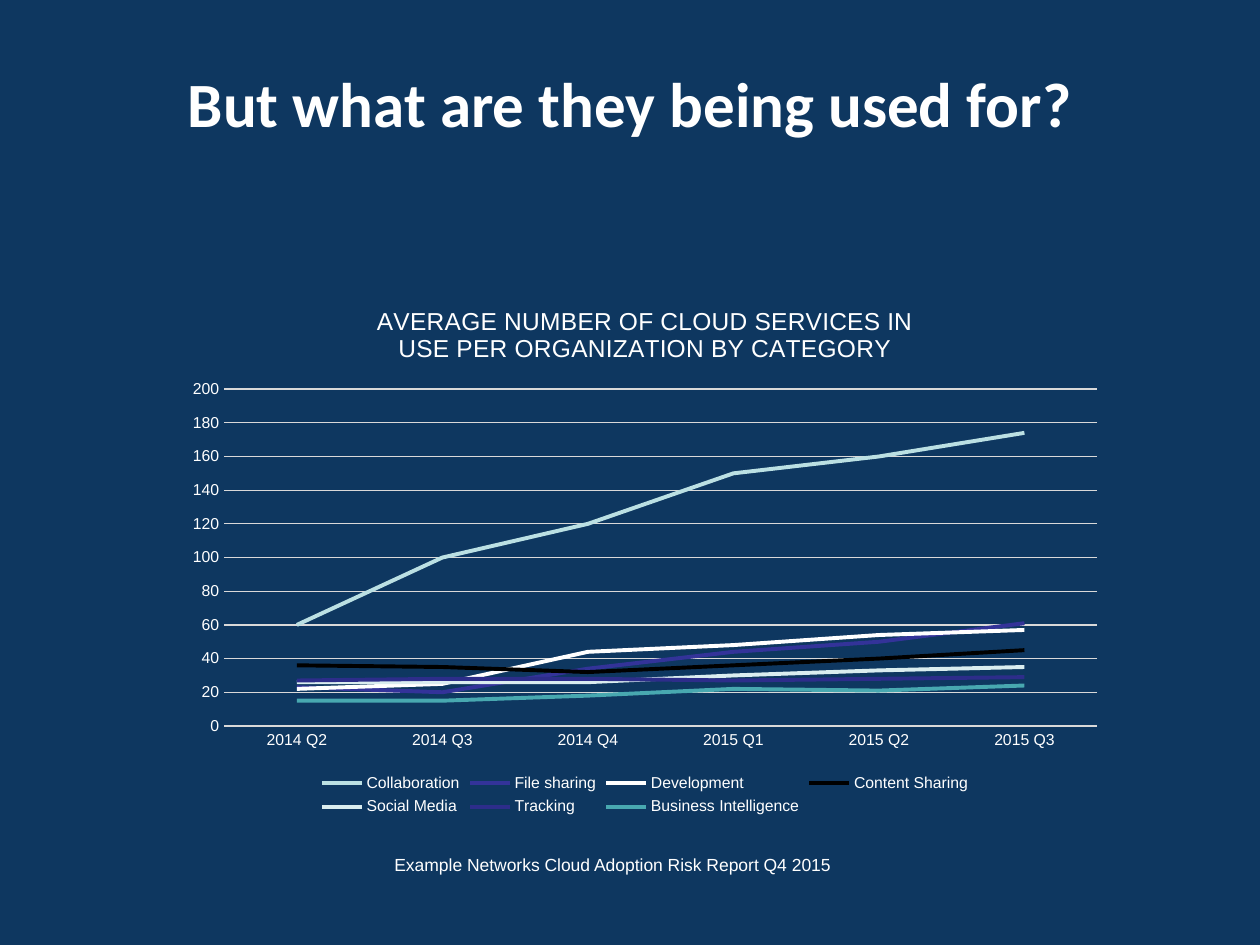
from pptx import Presentation
from pptx.chart.data import CategoryChartData
from pptx.dml.color import RGBColor
from pptx.enum.chart import XL_CHART_TYPE, XL_LEGEND_POSITION, XL_MARKER_STYLE, XL_TICK_MARK
from pptx.enum.text import MSO_ANCHOR, MSO_AUTO_SIZE, PP_ALIGN
from pptx.util import Emu, Pt

NAVY = RGBColor(0x0E, 0x37, 0x60)
WHITE = RGBColor(0xFF, 0xFF, 0xFF)
BLACK = RGBColor(0x00, 0x00, 0x00)
GRAY = RGBColor(0xD9, 0xD9, 0xD9)
PALE_TEAL = RGBColor(0xBB, 0xE0, 0xE3)
INDIGO = RGBColor(0x33, 0x33, 0x99)
ICE = RGBColor(0xDA, 0xED, 0xEF)
DARK_INDIGO = RGBColor(0x2D, 0x2D, 0x8A)
TEAL = RGBColor(0x48, 0xA8, 0xB0)

QUARTERS = ["2014 Q2", "2014 Q3", "2014 Q4", "2015 Q1", "2015 Q2", "2015 Q3"]
SERVICES = [
    ("Collaboration", PALE_TEAL, (60, 100, 120, 150, 160, 174)),
    ("File sharing", INDIGO, (23, 20, 34, 44, 50, 61)),
    ("Development", WHITE, (22, 25, 44, 48, 54, 57)),
    ("Content Sharing", BLACK, (36, 35, 32, 36, 40, 45)),
    ("Social Media", ICE, (26, 26, 26, 30, 33, 35)),
    ("Tracking", DARK_INDIGO, (27, 28, 28, 27, 28, 29)),
    ("Business Intelligence", TEAL, (15, 15, 18, 22, 21, 24)),
]


class Deck:
    heading_font = "Calibri"
    body_font = "Arial"
    scale = 914400 / 126

    def __init__(self, width, height):
        self.prs = Presentation()
        self.prs.slide_width, self.prs.slide_height = self.px(width, height)
        self.s = self.prs.slides.add_slide(self.prs.slide_layouts[5])
        self.s.background.fill.solid()
        self.s.background.fill.fore_color.rgb = NAVY

    def px(self, *lengths):
        return [Emu(round(n * self.scale)) for n in lengths]

    def style(self, font, size, name=body_font, bold=False, color=WHITE):
        font.name = name
        font.size = Pt(size)
        font.bold = bold
        font.color.rgb = color

    def title(self, text, *box):
        sp = self.s.shapes.title
        sp.left, sp.top, sp.width, sp.height = self.px(*box)
        tf = sp.text_frame
        tf.vertical_anchor = MSO_ANCHOR.MIDDLE
        p = tf.paragraphs[0]
        p.alignment = PP_ALIGN.CENTER
        r = p.add_run()
        r.text = text
        self.style(r.font, 36, self.heading_font, True)

    def text(self, text, *box):
        tf = self.s.shapes.add_textbox(*self.px(*box)).text_frame
        tf.word_wrap = True
        tf.auto_size = MSO_AUTO_SIZE.SHAPE_TO_FIT_TEXT
        r = tf.paragraphs[0].add_run()
        r.text = text
        self.style(r.font, 10)

    def line(self, line, color, width):
        line.color.rgb = color
        line.width = Pt(width)

    def line_chart(self, title_lines, categories, series, *box):
        data = CategoryChartData()
        data.categories = categories
        for name, _, values in series:
            data.add_series(name, values)
        chart = self.s.shapes.add_chart(XL_CHART_TYPE.LINE, *self.px(*box), data).chart
        self.style(chart.font, 10, color=BLACK)
        self.chart_title(chart, title_lines)
        chart.has_legend = True
        chart.legend.position = XL_LEGEND_POSITION.BOTTOM
        chart.legend.include_in_layout = False
        self.style(chart.legend.font, 9)
        plot = chart.plots[0]
        plot.vary_by_categories = False
        for ser, (_, color, _) in zip(plot.series, series):
            ser.smooth = False
            ser.marker.style = XL_MARKER_STYLE.NONE
            self.line(ser.format.line, color, 2.25)
        for axis in (chart.category_axis, chart.value_axis):
            axis.major_tick_mark = axis.minor_tick_mark = XL_TICK_MARK.NONE
            self.style(axis.tick_labels.font, 9)
        self.line(chart.category_axis.format.line, GRAY, 0.75)
        axis = chart.value_axis
        axis.minimum_scale, axis.maximum_scale, axis.major_unit = 0, 200, 20
        axis.format.line.fill.background()
        self.line(axis.major_gridlines.format.line, GRAY, 0.75)

    def chart_title(self, chart, lines):
        chart.has_title = True
        chart.chart_title.include_in_layout = False
        tf = chart.chart_title.text_frame
        for i, text in enumerate(lines):
            p = tf.add_paragraph() if i else tf.paragraphs[0]
            p.alignment = PP_ALIGN.CENTER
            r = p.add_run()
            r.text = text
            self.style(r.font, 14)


def main():
    deck = Deck(1260, 945)
    deck.text("Example Networks Cloud Adoption Risk Report Q4 2015", 382, 848, 476, 34)
    deck.line_chart(
        ["AVERAGE NUMBER OF CLOUD SERVICES IN", "USE PER ORGANIZATION BY CATEGORY"],
        QUARTERS, SERVICES, 174, 284, 942, 537)
    deck.title("But what are they being used for?", 63, 33, 1134, 139)
    deck.prs.save("out.pptx")


if __name__ == "__main__":
    main()
